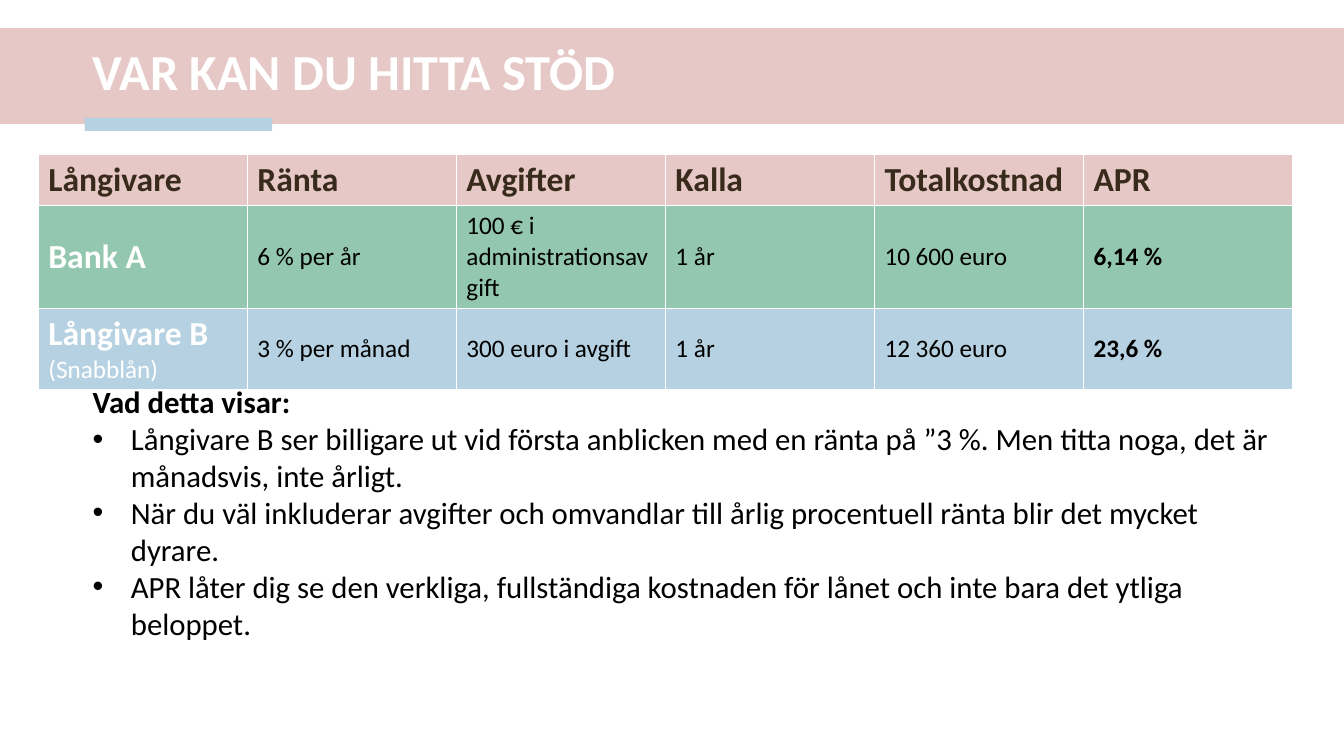
import pptx
import pptx.util
import pptx.dml.color
import pptx.enum.shapes
import pptx.enum.text
import lxml.etree

Inches = pptx.util.Inches
MIDDLE = pptx.enum.text.MSO_ANCHOR.MIDDLE
PINK, GREEN, BLUE = "E6C8C7", "94C7B0", "B6D1E1"
WHITE, BLACK, BROWN = "FFFFFF", "000000", "382B1B"

ROWS = [
    ["Långivare", "Ränta", "Avgifter", "Kalla", "Totalkostnad", "APR"],
    ["Bank A", "6 % per år", "100 € i administrationsavgift", "1 år",
     "10 600 euro", "6,14 %"],
    ["Långivare B ", "3 % per månad", "300 euro i avgift", "1 år",
     "12 360 euro", "23,6 %"],
]
POINTS = [
    "Långivare B ser billigare ut vid första anblicken med en ränta på ”3 %. "
    "Men titta noga, det är månadsvis, inte årligt.",
    "När du väl inkluderar avgifter och omvandlar till årlig procentuell ränta "
    "blir det mycket dyrare.",
    "APR låter dig se den verkliga, fullständiga kostnaden för lånet och inte "
    "bara det ytliga beloppet.",
]


def color(code):
    return pptx.dml.color.RGBColor.from_string(code)


def style(run, size, code, bold=False):
    run.font.name = "Calibri"
    run.font.size = pptx.util.Pt(size)
    run.font.bold = bold
    run.font.color.rgb = color(code)


def add_bar(slide, left, top, width, height, code):
    bar = slide.shapes.add_shape(
        pptx.enum.shapes.MSO_SHAPE.RECTANGLE,
        Inches(left), Inches(top), Inches(width), Inches(height))
    bar.shadow.inherit = False
    bar.fill.solid()
    bar.fill.fore_color.rgb = color(code)
    bar.line.fill.background()


def add_text(slide, left, top, width, height):
    box = slide.shapes.add_textbox(
        Inches(left), Inches(top), Inches(width), Inches(height))
    box.text_frame.word_wrap = True
    return box.text_frame


def add_header(slide, left, top, width, height):
    add_bar(slide, left, top, width, height, PINK)
    add_bar(slide, left + 0.84, top + height - 0.06, 1.86, 0.13, BLUE)
    frame = add_text(slide, left + 0.82, top + 0.06, 11.93, 0.79)
    frame.vertical_anchor = MIDDLE
    frame.text = "VAR KAN DU HITTA STÖD"
    title = frame.paragraphs[0]
    title.line_spacing = 0.9
    style(title.runs[0], 36, WHITE, True)


def add_loans(slide, left, top, width, heights):
    count = len(ROWS[0])
    table = slide.shapes.add_table(
        len(ROWS), count, Inches(left), Inches(top),
        Inches(width), Inches(sum(heights))).table
    for col in table.columns:
        col.width = Inches(width / count)
    for r, (texts, fill) in enumerate(zip(ROWS, [PINK, GREEN, BLUE])):
        table.rows[r].height = Inches(heights[r])
        for c, text in enumerate(texts):
            cell = table.cell(r, c)
            cell.fill.solid()
            cell.fill.fore_color.rgb = color(fill)
            cell.vertical_anchor = MIDDLE
            cell.text_frame.text = text
            run = cell.text_frame.paragraphs[0].runs[0]
            if r == 0:
                style(run, 24, BROWN, True)
            elif c == 0:
                style(run, 24, WHITE, True)
            else:
                style(run, 18, BLACK, c == count - 1)
    note = table.cell(2, 0).text_frame.paragraphs[0].add_run()
    note.text = "(Snabblån)"
    style(note, 18, WHITE)


def add_bullet(para):
    props = para._p.get_or_add_pPr()
    props.set("marL", str(Inches(0.38)))
    props.set("indent", str(-Inches(0.38)))
    mark = lxml.etree.SubElement(props, pptx.oxml.ns.qn("a:buFont"))
    mark.set("typeface", "Arial")
    mark = lxml.etree.SubElement(props, pptx.oxml.ns.qn("a:buChar"))
    mark.set("char", "•")


def add_points(slide, left, top, width, height):
    frame = add_text(slide, left, top, width, height)
    frame.text = "Vad detta visar:"
    style(frame.paragraphs[0].runs[0], 22, BLACK, True)
    for point in POINTS:
        para = frame.add_paragraph()
        para.text = point
        add_bullet(para)
        style(para.runs[0], 22, BLACK)


def main():
    deck = pptx.Presentation()
    deck.slide_width = Inches(13.33)
    deck.slide_height = Inches(7.5)
    slide = deck.slides.add_slide(deck.slide_layouts[6])
    add_header(slide, 0, 0.28, 13.33, 0.95)
    add_loans(slide, 0.38, 1.53, 12.44, [0.51, 1.02, 0.81])
    add_points(slide, 0.82, 3.75, 11.93, 2.32)
    deck.save("out.pptx")


if __name__ == "__main__":
    main()
